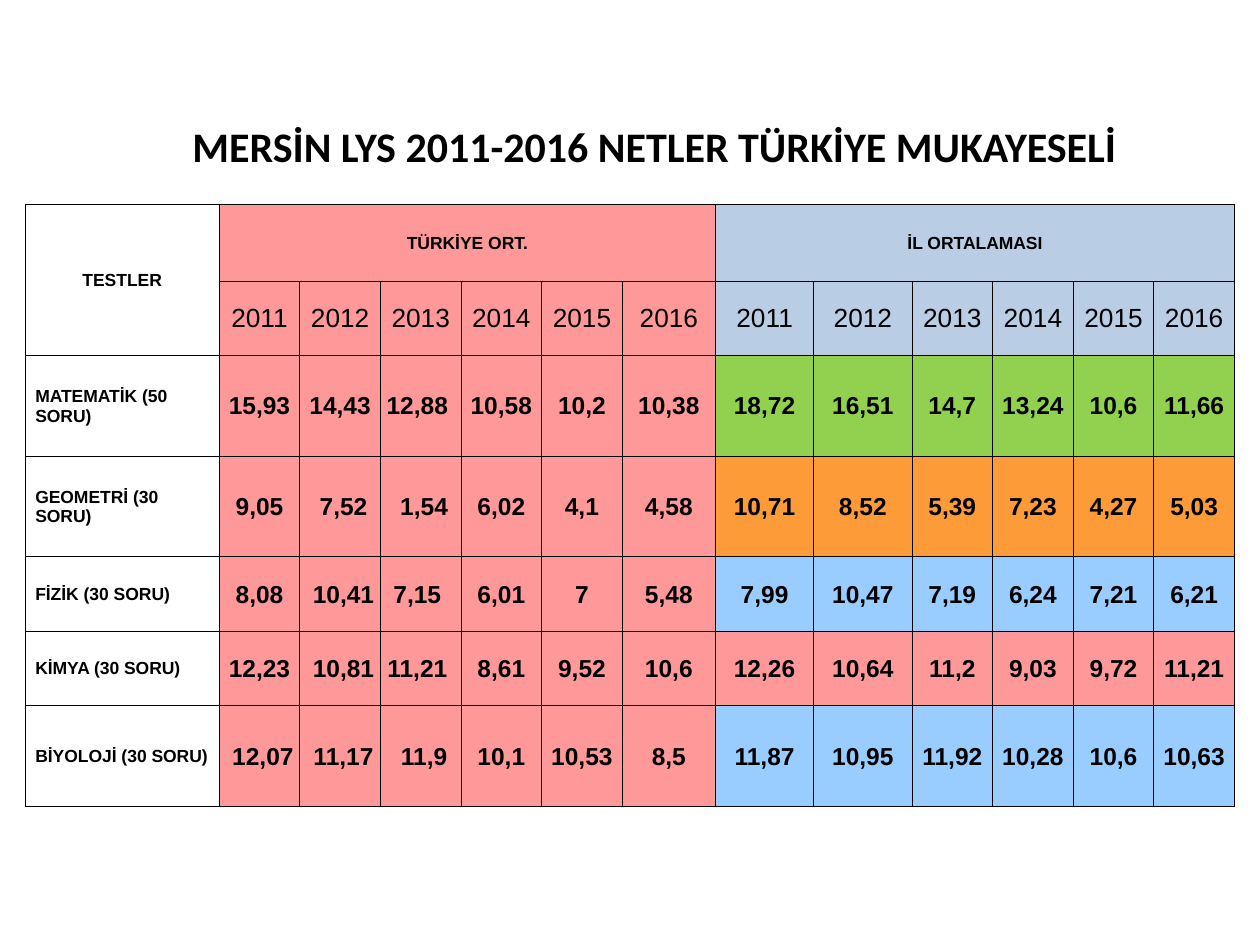
import lxml.etree
import pptx
import pptx.dml.color
import pptx.enum.text
import pptx.oxml.ns
import pptx.util

Inches = pptx.util.Inches
ALIGN = pptx.enum.text.PP_ALIGN
MIDDLE = pptx.enum.text.MSO_ANCHOR.MIDDLE

PINK, PALE_BLUE, GREEN, ORANGE, SKY, WHITE = (
    "FF9999", "B9CDE5", "92D050", "FD9B39", "99CCFF", "FFFFFF")
YEARS = ["2011", "2012", "2013", "2014", "2015", "2016"]
COLUMN_WIDTHS = [1.54] + [0.64] * 5 + [0.74] + [0.78] * 2 + [0.64] * 4
ROW_HEIGHTS = [0.61, 0.59, 0.8, 0.8, 0.59, 0.59, 0.8]

TESTS = [
    ("MATEMATİK (50 SORU)", GREEN,
     ["15,93", " 14,43 ", "12,88 ", "10,58", "10,2", "10,38"],
     ["18,72", "16,51", "14,7", "13,24", "10,6", "11,66"]),
    ("GEOMETRİ (30 SORU)", ORANGE,
     ["9,05", " 7,52", " 1,54", "6,02", "4,1", "4,58"],
     ["10,71", "8,52", "5,39", "7,23", "4,27", "5,03"]),
    ("FİZİK (30 SORU)", SKY,
     ["8,08", " 10,41", "7,15 ", "6,01", "7", "5,48"],
     ["7,99", "10,47", "7,19", "6,24", "7,21", "6,21"]),
    ("KİMYA (30 SORU)", PINK,
     ["12,23", " 10,81", "11,21 ", "8,61", "9,52", "10,6"],
     ["12,26", "10,64", "11,2", "9,03", "9,72", "11,21"]),
    ("BİYOLOJİ (30 SORU)", SKY,
     [" 12,07", " 11,17", " 11,9", "10,1", "10,53", "8,5"],
     ["11,87", "10,95", "11,92", "10,28", "10,6", "10,63"]),
]


def rgb(hex_color):
    return pptx.dml.color.RGBColor.from_string(hex_color)


def write_text(frame, text, size=14, bold=True, font="Arial", color="000000",
               align=ALIGN.CENTER):
    paragraph = frame.paragraphs[0]
    paragraph.alignment = align
    run = paragraph.add_run()
    run.text = text
    run.font.name = font
    run.font.size = pptx.util.Pt(size)
    run.font.bold = bold
    run.font.color.rgb = rgb(color)


def add_borders(cell, color="000000", width=0.5):
    properties = cell._tc.get_or_add_tcPr()
    qn = pptx.oxml.ns.qn
    for position, side in enumerate(("a:lnL", "a:lnR", "a:lnT", "a:lnB")):
        border = lxml.etree.Element(qn(side), w=str(pptx.util.Pt(width)))
        fill = lxml.etree.SubElement(border, qn("a:solidFill"))
        lxml.etree.SubElement(fill, qn("a:srgbClr"), val=color)
        properties.insert(position, border)


def fill_cell(cell, text, fill, indent=0.01, **text_format):
    cell.fill.solid()
    cell.fill.fore_color.rgb = rgb(fill)
    cell.vertical_anchor = MIDDLE
    cell.margin_left = Inches(indent)
    cell.margin_right = cell.margin_top = Inches(0.01)
    cell.margin_bottom = 0
    write_text(cell.text_frame, text, **text_format)


def add_title(slide):
    title = slide.shapes.add_textbox(
        Inches(0.59), Inches(0.91), Inches(9.21), Inches(0.5))
    title.text_frame.word_wrap = True
    write_text(title.text_frame, "MERSİN LYS 2011-2016 NETLER TÜRKİYE MUKAYESELİ",
               size=24, font="Calibri")


def add_scores_table(slide):
    scores = slide.shapes.add_table(
        len(ROW_HEIGHTS), len(COLUMN_WIDTHS), Inches(0.2), Inches(1.62),
        Inches(sum(COLUMN_WIDTHS)), Inches(sum(ROW_HEIGHTS))).table
    scores.first_row = scores.horz_banding = False
    for column, width in zip(scores.columns, COLUMN_WIDTHS):
        column.width = Inches(width)
    for row, height in zip(scores.rows, ROW_HEIGHTS):
        row.height = Inches(height)
    for cell in scores.iter_cells():
        add_borders(cell)

    scores.cell(0, 0).merge(scores.cell(1, 0))
    fill_cell(scores.cell(0, 0), "TESTLER", WHITE, size=10)
    for first, heading, fill in ((1, "TÜRKİYE ORT.", PINK),
                                 (7, "İL ORTALAMASI", PALE_BLUE)):
        scores.cell(0, first).merge(scores.cell(0, first + len(YEARS) - 1))
        fill_cell(scores.cell(0, first), heading, fill, size=10)
        for column, year in enumerate(YEARS, first):
            fill_cell(scores.cell(1, column), year, fill, size=15, bold=False)

    for row, (test, province_fill, country, province) in enumerate(TESTS, 2):
        fill_cell(scores.cell(row, 0), test, WHITE, indent=0.08, size=10,
                  align=ALIGN.LEFT)
        for first, fill, values in ((1, PINK, country),
                                    (7, province_fill, province)):
            for column, value in enumerate(values, first):
                fill_cell(scores.cell(row, column), value, fill)


def main():
    presentation = pptx.Presentation()
    presentation.slide_width = Inches(10)
    presentation.slide_height = Inches(7.5)
    slide = presentation.slides.add_slide(presentation.slide_layouts[6])
    add_title(slide)
    add_scores_table(slide)
    presentation.save("out.pptx")


if __name__ == "__main__":
    main()
